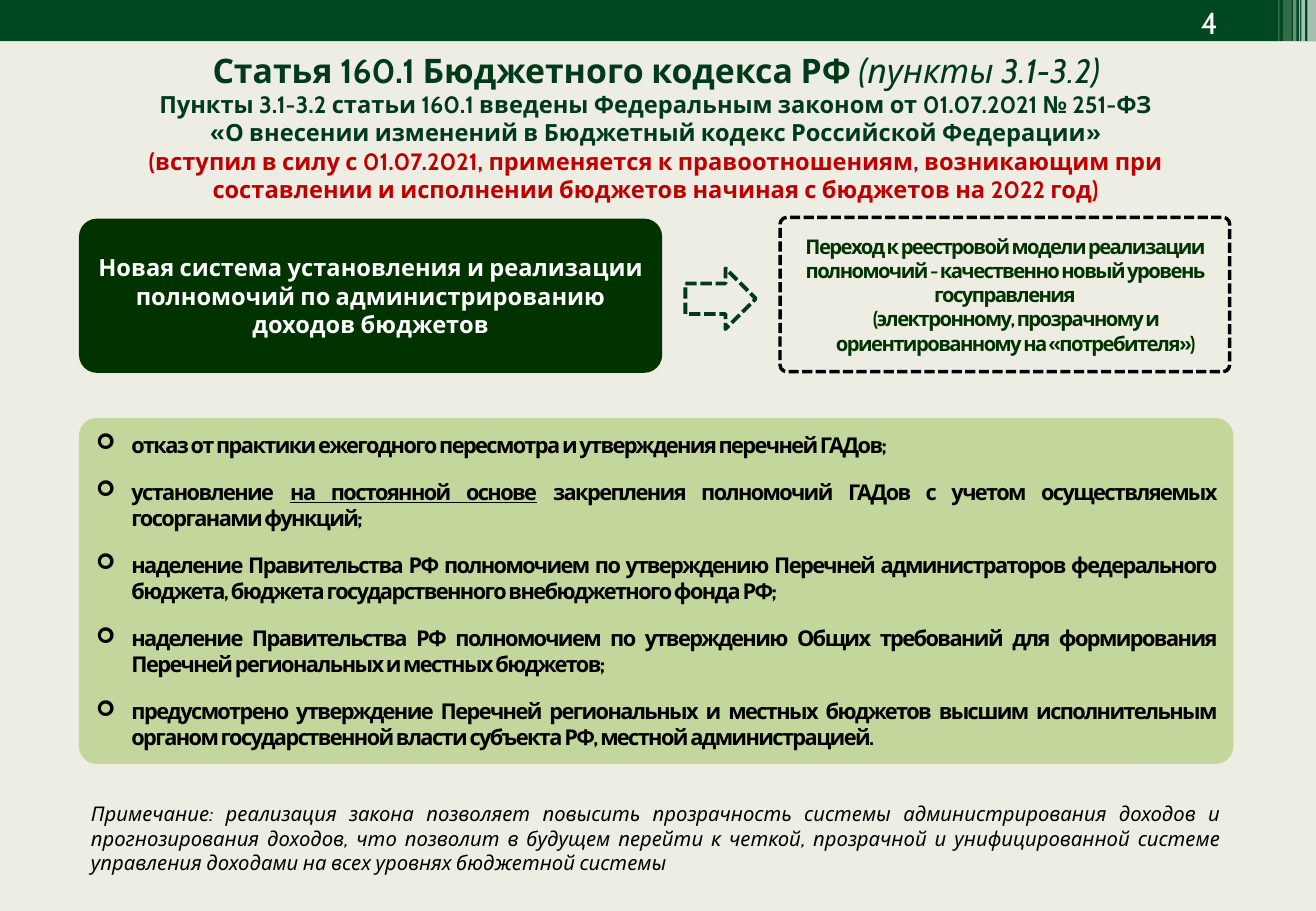
from pptx import Presentation
from pptx.dml.color import RGBColor
from pptx.enum import dml, shapes, text
from pptx.oxml.ns import qn
from pptx.util import Inches, Pt
from lxml import etree

PAPER = RGBColor(0xED, 0xED, 0xE3)
BAND = RGBColor(0x00, 0x48, 0x21)
DEEP = RGBColor(0x00, 0x33, 0x00)
GREEN = RGBColor(0x00, 0x3A, 0x1A)
LIGHT = RGBColor(0xC3, 0xD6, 0x9B)
RED = RGBColor(0xC0, 0x00, 0x00)
WHITE = RGBColor(0xFF, 0xFF, 0xFF)
BLACK = RGBColor(0x00, 0x00, 0x00)
SHAPE = shapes.MSO_SHAPE
CENTER, JUSTIFY, RIGHT = text.PP_ALIGN.CENTER, text.PP_ALIGN.JUSTIFY, text.PP_ALIGN.RIGHT

prs = Presentation()
prs.slide_width, prs.slide_height = Inches(10.83), Inches(7.5)
s = prs.slides.add_slide(prs.slide_layouts[6])
s.background.fill.solid()
s.background.fill.fore_color.rgb = PAPER


def add_box(box, kind=None, fill=None, line=None, width=0, adj=None):
    dims = [Inches(v) for v in box]
    if kind is None:
        sp = s.shapes.add_textbox(*dims)
    else:
        sp = s.shapes.add_shape(kind, *dims)
        sp.shadow.inherit = False
        if adj is not None:
            sp.adjustments[0] = adj
        if fill is None:
            sp.fill.background()
        else:
            sp.fill.solid()
            sp.fill.fore_color.rgb = fill
        if line is None:
            sp.line.fill.background()
        else:
            sp.line.color.rgb = line
            sp.line.width = Pt(width)
            sp.line.dash_style = dml.MSO_LINE.SQUARE_DOT
        sp.text_frame.vertical_anchor = text.MSO_ANCHOR.MIDDLE
    sp.text_frame.word_wrap = True
    return sp


def add_text(tf, runs, size, color, align=CENTER, bold=False, italic=False,
             spacing=0, bullet=None, indent=0):
    p = tf.paragraphs[0]
    if p.runs:
        p = tf.add_paragraph()
    p.alignment = align
    pPr = p._p.get_or_add_pPr()
    if indent:
        pPr.set("marL", str(Inches(indent)))
    if bullet:
        pPr.set("indent", str(-Inches(indent)))
        etree.SubElement(pPr, qn("a:buFont")).set("typeface", "Wingdings")
        etree.SubElement(pPr, qn("a:buChar")).set("char", bullet)
    for words in runs:
        r = p.add_run()
        r.text = words
        r.font.name, r.font.size = "Cabin", Pt(size)
        r.font.bold, r.font.italic = bold, italic
        r.font.color.rgb = color
        if spacing:
            r._r.get_or_add_rPr().set("spc", str(round(spacing * 100)))
    return p


add_box((0, 0, 10.83, 0.34), SHAPE.RECTANGLE, BAND)
for left, width, height, alpha in [
    (10.76, 0.07, 0.34, 65), (10.71, 0.03, 0.34, 65), (10.69, 0.01, 0.34, 60),
    (10.64, 0.03, 0.34, 40), (10.56, 0.07, 0.36, 20), (10.52, 0.01, 0.36, 30),
]:
    stripe = add_box((left, 0, width, height), SHAPE.RECTANGLE, WHITE)
    clr = stripe._element.spPr.find(qn("a:solidFill")).find(qn("a:srgbClr"))
    etree.SubElement(clr, qn("a:alpha")).set("val", str(alpha * 1000))

number = add_box((9.35, 0, 0.77, 0.37)).text_frame
number.vertical_anchor = text.MSO_ANCHOR.MIDDLE
add_text(number, ["4"], 18, WHITE, RIGHT)

system = add_box((0.65, 1.8, 4.8, 1.27), SHAPE.ROUNDED_RECTANGLE, DEEP, adj=0.117)
add_text(system.text_frame, ["Новая система установления и реализации полномочий по администрированию доходов бюджетов"],
         14, WHITE, bold=True)

registry = add_box((6.42, 1.79, 3.7, 1.27), SHAPE.ROUNDED_RECTANGLE, line=BLACK, width=2, adj=0.043)
for words, indent in [
    ("Переход к реестровой модели реализации полномочий - качественно новый уровень госуправления", 0),
    ("(электронному, прозрачному и ориентированному на «потребителя»)", 0.18),
]:
    add_text(registry.text_frame, [words], 12, DEEP, bold=True, spacing=-0.9, indent=indent)

add_box((5.64, 2.21, 0.58, 0.5), SHAPE.RIGHT_ARROW, line=GREEN, width=2.25)

measures = add_box((0.65, 3.44, 9.5, 2.85), SHAPE.ROUNDED_RECTANGLE, LIGHT, adj=0.052)
for i, runs in enumerate([
    ["отказ от практики ежегодного пересмотра и утверждения перечней ГАДов;"],
    ["установление ", "на постоянной основе",
     " закрепления полномочий ГАДов с учетом осуществляемых госорганами функций;"],
    ["наделение Правительства РФ полномочием по утверждению Перечней администраторов федерального бюджета, бюджета государственного внебюджетного фонда РФ;"],
    ["наделение Правительства РФ полномочием по утверждению Общих требований для формирования Перечней региональных и местных бюджетов;"],
    ["предусмотрено утверждение Перечней региональных и местных бюджетов высшим исполнительным органом государственной власти субъекта РФ, местной администрацией."],
]):
    p = add_text(measures.text_frame, runs, 12.9, BLACK, JUSTIFY, bold=True,
                 spacing=-0.9, bullet="➢", indent=0.29)
    if i:
        p.space_before = Pt(12.4)
    if len(runs) > 1:
        p.runs[1].font.underline = True

note = add_box((0.65, 6.55, 9.5, 0.71))
add_text(note.text_frame, ["Примечание: реализация закона позволяет повысить прозрачность системы администрирования доходов и прогнозирования доходов, что позволит в будущем перейти к четкой, прозрачной и унифицированной системе управления доходами на всех уровнях бюджетной системы"],
         12, BLACK, JUSTIFY, italic=True)

subtitle = add_box((0.47, 0.69, 9.85, 1.04))
for words, color in [
    ("Пункты 3.1-3.2 статьи 160.1 введены Федеральным законом от 01.07.2021 № 251-ФЗ", GREEN),
    ("«О внесении изменений в Бюджетный кодекс Российской Федерации»", GREEN),
    ("(вступил в силу с 01.07.2021, применяется к правоотношениям, возникающим при составлении и исполнении бюджетов начиная с бюджетов на 2022 год)", RED),
]:
    add_text(subtitle.text_frame, [words], 14, color, bold=True)

title = add_box((0.52, 0.36, 9.76, 0.44))
p = add_text(title.text_frame, ["Статья 160.1 Бюджетного кодекса РФ ", "(пункты 3.1-3.2)"], 20, GREEN, bold=True)
p.runs[1].font.bold, p.runs[1].font.italic = False, True

prs.save("out.pptx")
